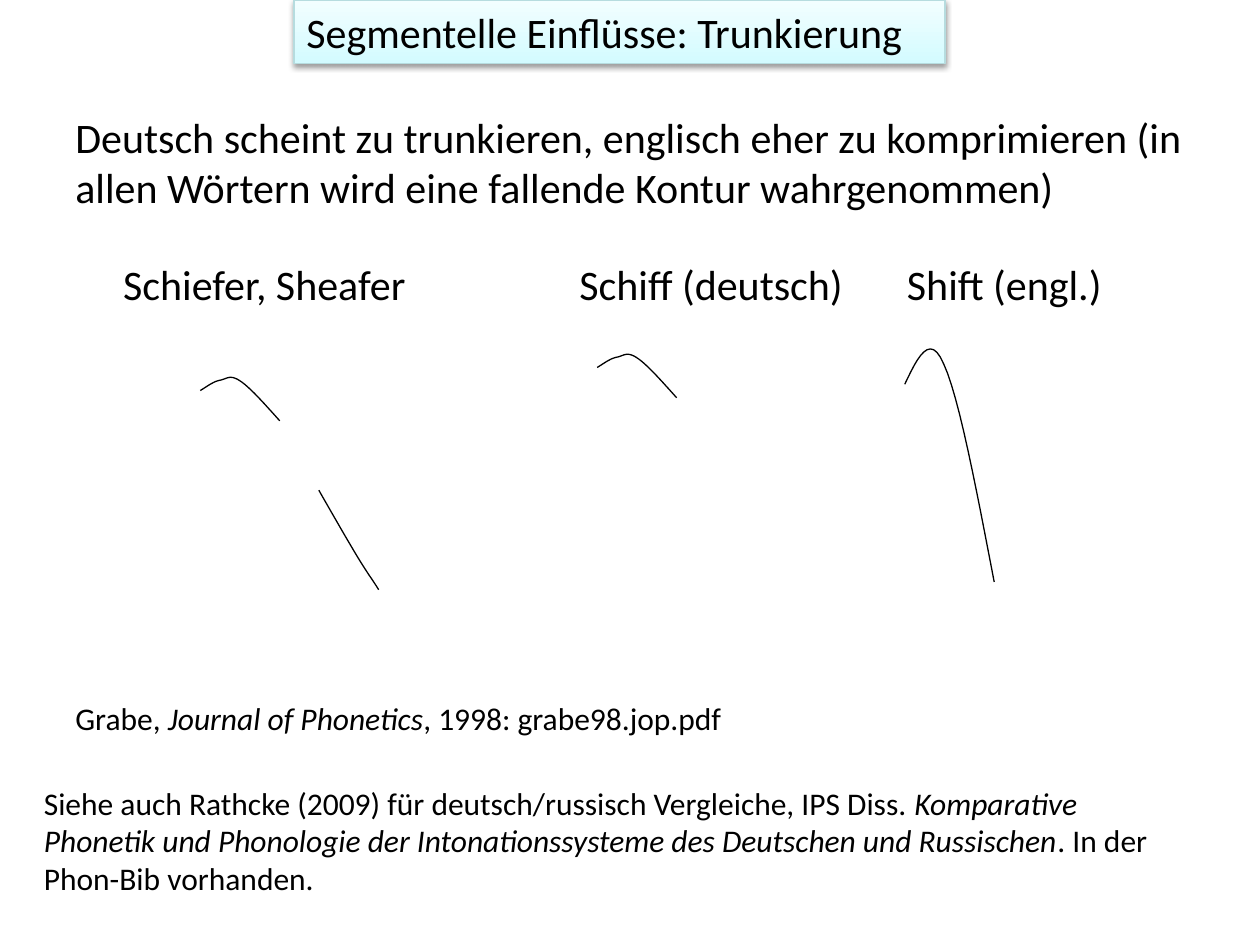
from lxml.etree import SubElement
from pptx import Presentation
from pptx.dml.color import RGBColor
from pptx.enum.shapes import MSO_SHAPE as Preset
from pptx.enum.text import MSO_ANCHOR as Anchor, PP_ALIGN as Align
from pptx.oxml.ns import qn
from pptx.util import Pt


def color(code):
    return RGBColor.from_string(code)


def bezier(p0, p1, p2, p3, steps=12):
    for step in range(1, steps + 1):
        t = step / steps
        u = 1 - t
        yield tuple(
            u**3 * a + 3 * u * u * t * b + 3 * u * t * t * c + t**3 * d
            for a, b, c, d in zip(p0, p1, p2, p3)
        )


class Board:
    font = "Calibri"
    ink = "000000"
    line_width = 0.75

    def __init__(self, slide):
        self.slide = slide

    def fill_text(self, frame, parts, size, wrap=True):
        frame.word_wrap = wrap
        frame.vertical_anchor = Anchor.TOP
        paragraph = frame.paragraphs[0]
        paragraph.alignment = Align.LEFT
        for wording, italic in parts:
            run = paragraph.add_run()
            run.text = wording
            run.font.name = self.font
            run.font.size = Pt(size)
            run.font.italic = italic
            run.font.color.rgb = color(self.ink)

    def text(self, box, parts, size=24, wrap=True):
        area = self.slide.shapes.add_textbox(*map(Pt, box))
        self.fill_text(area.text_frame, parts, size, wrap)

    def banner(self, box, wording, gradient, border):
        panel = self.slide.shapes.add_shape(Preset.RECTANGLE, *map(Pt, box))
        panel.fill.gradient()
        panel.fill.gradient_angle = 90
        for stop, code in zip(panel.fill.gradient_stops, gradient):
            stop.color.rgb = color(code)
        panel.line.color.rgb = color(border)
        panel.line.width = Pt(self.line_width)
        self.drop_shadow(panel)
        self.fill_text(panel.text_frame, [(wording, False)], 24)

    def drop_shadow(self, panel):
        panel.shadow.inherit = False
        effects = panel._element.spPr.find(qn("a:effectLst"))
        shadow = SubElement(
            effects, qn("a:outerShdw"), blurRad=str(Pt(3.1)),
            dist=str(Pt(1.6)), dir="5400000", rotWithShape="0",
        )
        tint = SubElement(shadow, qn("a:srgbClr"), val=self.ink)
        SubElement(tint, qn("a:alpha"), val="38000")

    def contour(self, start, offsets):
        left, top = start
        points = [start] + [(left + dx, top + dy) for dx, dy in offsets]
        builder = self.slide.shapes.build_freeform(Pt(left), Pt(top))
        for i in range(0, len(points) - 1, 3):
            curve = bezier(*points[i:i + 4])
            builder.add_line_segments([(Pt(x), Pt(y)) for x, y in curve], close=False)
        pitch = builder.convert_to_shape()
        pitch.shadow.inherit = False
        pitch.fill.background()
        pitch.line.color.rgb = color(self.ink)
        pitch.line.width = Pt(self.line_width)


def main():
    deck = Presentation()
    deck.slide_width, deck.slide_height = Pt(720), Pt(540)
    board = Board(deck.slides.add_slide(deck.slide_layouts[6]))

    board.banner((168, 0, 372, 36.4), "Segmentelle Einflüsse: Trunkierung",
                 ("D3FBFF", "F2FEFF"), "B6DCDF")
    board.text((36, 60, 648, 65.4), [(
        "Deutsch scheint zu trunkieren, englisch eher zu komprimieren "
        "(in allen Wörtern wird eine fallende Kontur wahrgenommen)", False)])

    words = [("Schiefer, Sheafer", 63.3, 181.5), ("Schiff (deutsch)", 324, 166.3),
             ("Shift (engl.)", 511.2, 126.7)]
    for word, left, width in words:
        board.text((left, 144, width, 36.4), [(word, False)], wrap=False)

    truncated = [(3.6, -2.2), (7.2, -5), (10.8, -5.8),
                 (15.1, -6.5), (16.6, -9.4), (22.3, -5.8),
                 (28.1, -2.2), (36.7, 7.6), (45.4, 17.3)]
    falling = [(8.6, 15.1), (17.3, 30.2), (23, 39.6),
               (28.8, 49), (31.7, 52.6), (34.2, 56.9)]
    compressed = [(7.2, -15.1), (14.4, -30.2), (22.3, -11.5),
                  (31, 7.2), (41, 60.5), (51.1, 113)]
    contours = [((182.2, 280.1), falling), ((114.5, 223.2), truncated),
                ((341.3, 210), truncated), ((517, 219.6), compressed)]
    for start, offsets in contours:
        board.contour(start, offsets)

    board.text((36, 396, 612, 29.1), [
        ("Grabe, ", False), ("Journal of Phonetics", True),
        (", 1998: grabe98.jop.pdf", False)], 18)
    board.text((18, 444.2, 648, 72.7), [
        ("Siehe auch Rathcke (2009) für deutsch/russisch Vergleiche, IPS Diss. ", False),
        ("Komparative Phonetik und Phonologie der Intonationssysteme "
         "des Deutschen und Russischen", True),
        (". In der Phon-Bib vorhanden.", False)], 18)

    deck.save("out.pptx")


if __name__ == "__main__":
    main()
